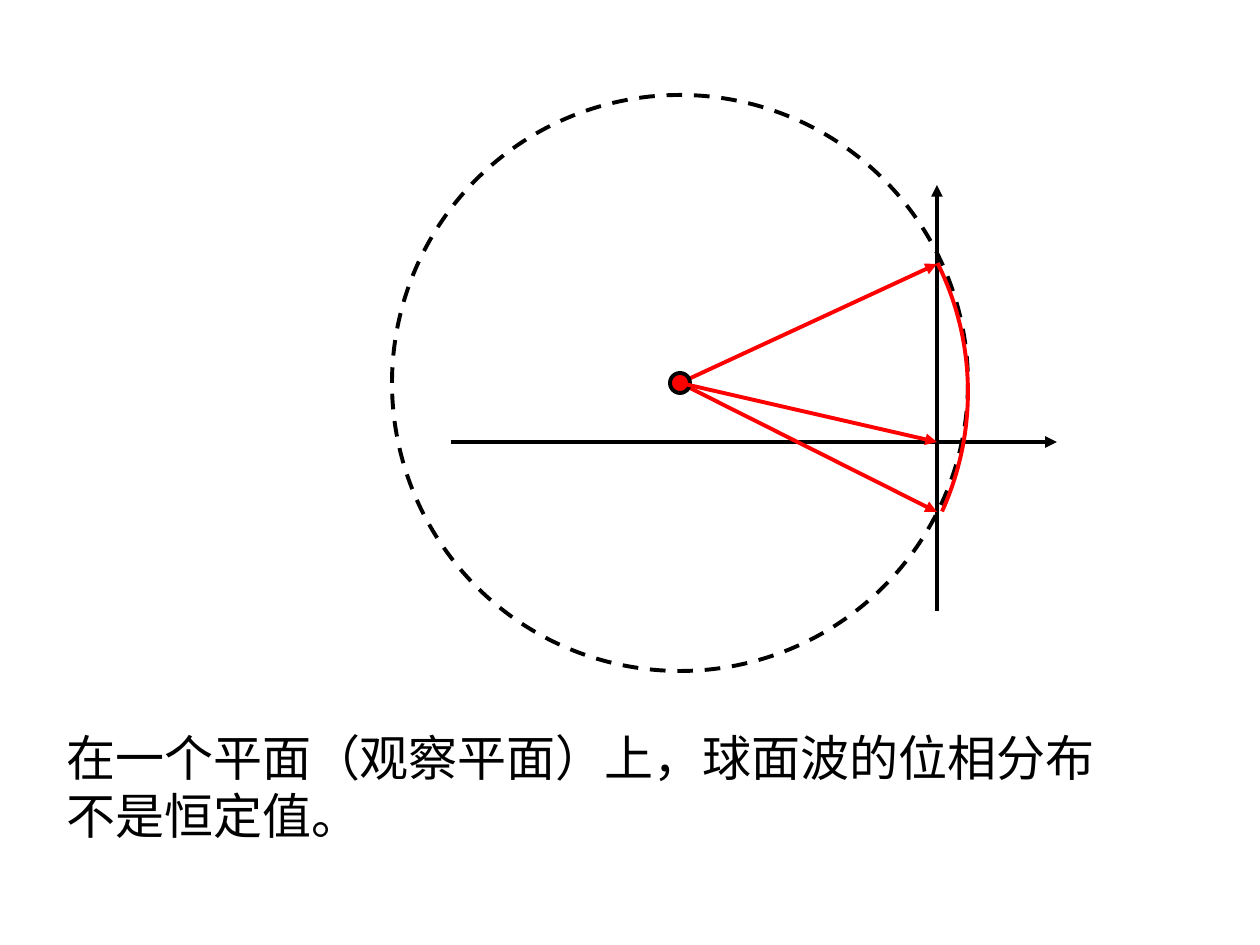
from dataclasses import dataclass

from lxml import etree
from pptx import Presentation
from pptx.dml.color import RGBColor
from pptx.enum.dml import MSO_LINE
from pptx.enum.shapes import MSO_CONNECTOR, MSO_SHAPE
from pptx.enum.text import MSO_AUTO_SIZE
from pptx.oxml.ns import qn
from pptx.util import Emu, Pt

PX_PER_INCH = 126
STRAIGHT = MSO_CONNECTOR.STRAIGHT
OVAL = MSO_SHAPE.OVAL
ARC = MSO_SHAPE.ARC
DASH = MSO_LINE.DASH
GROW = MSO_AUTO_SIZE.SHAPE_TO_FIT_TEXT


@dataclass(frozen=True)
class Theme:
    ink: RGBColor = RGBColor(0, 0, 0)
    wave: RGBColor = RGBColor(255, 0, 0)
    font: str = "Arial"
    body_size: float = 28
    line_width: float = 2.25


@dataclass(frozen=True)
class Point:
    x: int
    y: int


@dataclass(frozen=True)
class Arrow:
    start: Point
    end: Point
    color: RGBColor


@dataclass(frozen=True)
class Circle:
    center: Point
    radius: int


THEME = Theme()
SOURCE = Point(680, 383)
ORIGIN = Point(937, 442)
WAVEFRONT = Circle(SOURCE, 288)
SOURCE_DOT = Circle(SOURCE, 10)
ARC_CIRCLE = Circle(Point(680, 392), 288)
ARC_DEGREES = (333.4, 24.5)
AXES = [
    Arrow(Point(451, ORIGIN.y), Point(1057, ORIGIN.y), THEME.ink),
    Arrow(Point(ORIGIN.x, 611), Point(ORIGIN.x, 185), THEME.ink),
]
RAYS = [Arrow(SOURCE, Point(ORIGIN.x, y), THEME.wave) for y in (264, 512, ORIGIN.y)]
CAPTION = "在一个平面（观察平面）上，球面波的位相分布不是恒定值。"


def px(n: int) -> Emu:
    return Emu(round(n * 914400 / PX_PER_INCH))


def format_line(line, color: RGBColor) -> None:
    line.color.rgb = color
    line.width = Pt(THEME.line_width)


def add_arrow(slide, arrow: Arrow):
    a, b = arrow.start, arrow.end
    cxn = slide.shapes.add_connector(STRAIGHT, px(a.x), px(a.y), px(b.x), px(b.y))
    format_line(cxn.line, arrow.color)
    ln = cxn.line._get_or_add_ln()
    etree.SubElement(ln, qn("a:tailEnd"), type="triangle")
    etree.SubElement(cxn._element.spPr, qn("a:effectLst"))
    return cxn


def add_round(slide, circle: Circle, color: RGBColor, kind=OVAL, fill=None, dash=None):
    """Add a shape that fills the circle's bounding square."""
    c, r = circle.center, circle.radius
    sp = slide.shapes.add_shape(kind, px(c.x - r), px(c.y - r), px(2 * r), px(2 * r))
    sp.shadow.inherit = False
    if fill is None:
        sp.fill.background()
    else:
        sp.fill.solid()
        sp.fill.fore_color.rgb = fill
    format_line(sp.line, color)
    if dash is not None:
        sp.line.dash_style = dash
    return sp


def add_arc(slide, circle: Circle, degrees: tuple[float, float], color: RGBColor):
    sp = add_round(slide, circle, color, kind=ARC)
    for i, angle in enumerate(degrees):
        sp.adjustments[i] = angle * 0.6  # 60000 units a degree, 100000 per 1.0
    return sp


def add_text(slide, text: str, *, left: int, top: int, width: int, height: int,
             size: float, color: RGBColor):
    sp = slide.shapes.add_textbox(px(left), px(top), px(width), px(height))
    tf = sp.text_frame
    tf.word_wrap = True
    tf.auto_size = GROW
    r = tf.paragraphs[0].add_run()
    r.text = text
    r.font.name = THEME.font
    r.font.size = Pt(size)
    r.font.color.rgb = color
    return sp


def main() -> None:
    prs = Presentation()
    prs.slide_width, prs.slide_height = px(1260), px(945)
    slide = prs.slides.add_slide(prs.slide_layouts.get_by_name("Blank"))

    for axis in AXES:
        add_arrow(slide, axis)
    add_round(slide, WAVEFRONT, THEME.ink, dash=DASH)
    *outer_rays, origin_ray = RAYS
    for ray in outer_rays:
        add_arrow(slide, ray)
    add_arc(slide, ARC_CIRCLE, ARC_DEGREES, THEME.wave)
    add_round(slide, SOURCE_DOT, THEME.ink, fill=THEME.wave)
    add_arrow(slide, origin_ray)
    add_text(slide, CAPTION, left=54, top=721, width=1091, height=130,
             size=THEME.body_size, color=THEME.ink)

    prs.save("out.pptx")


if __name__ == "__main__":
    main()
